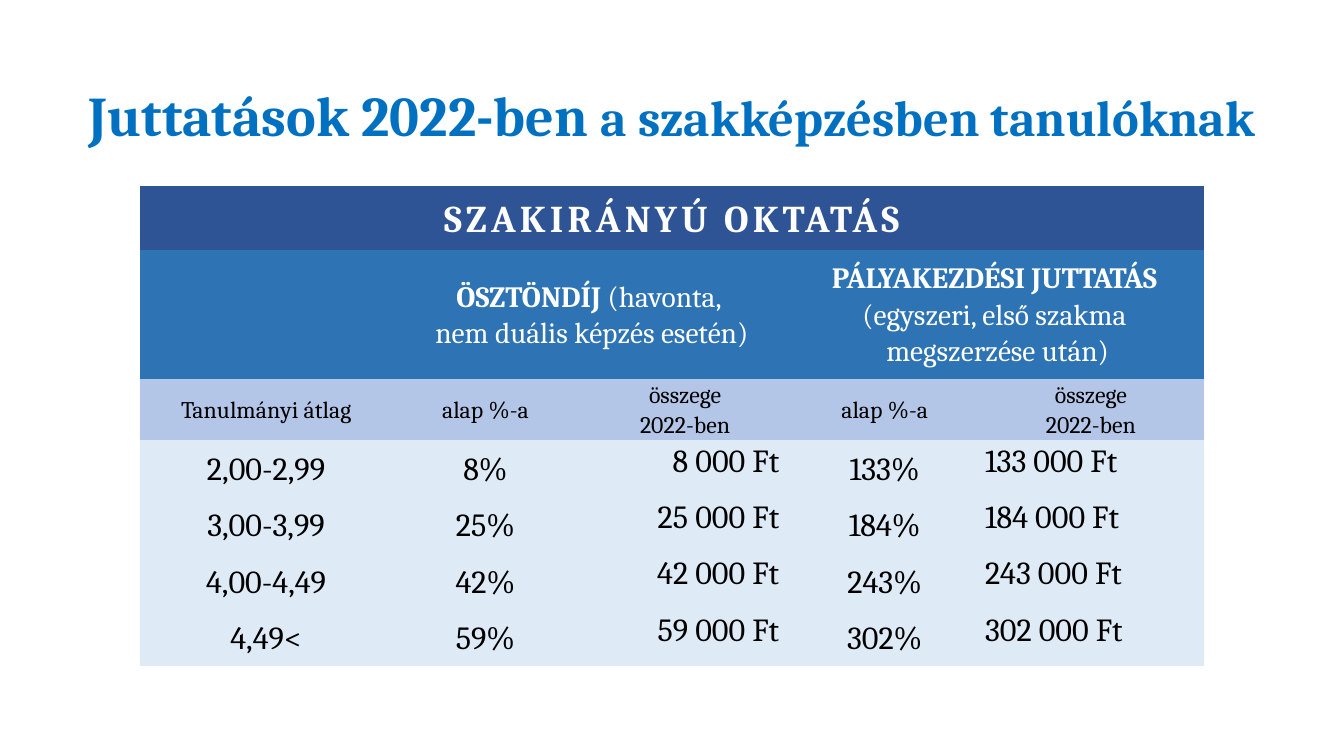
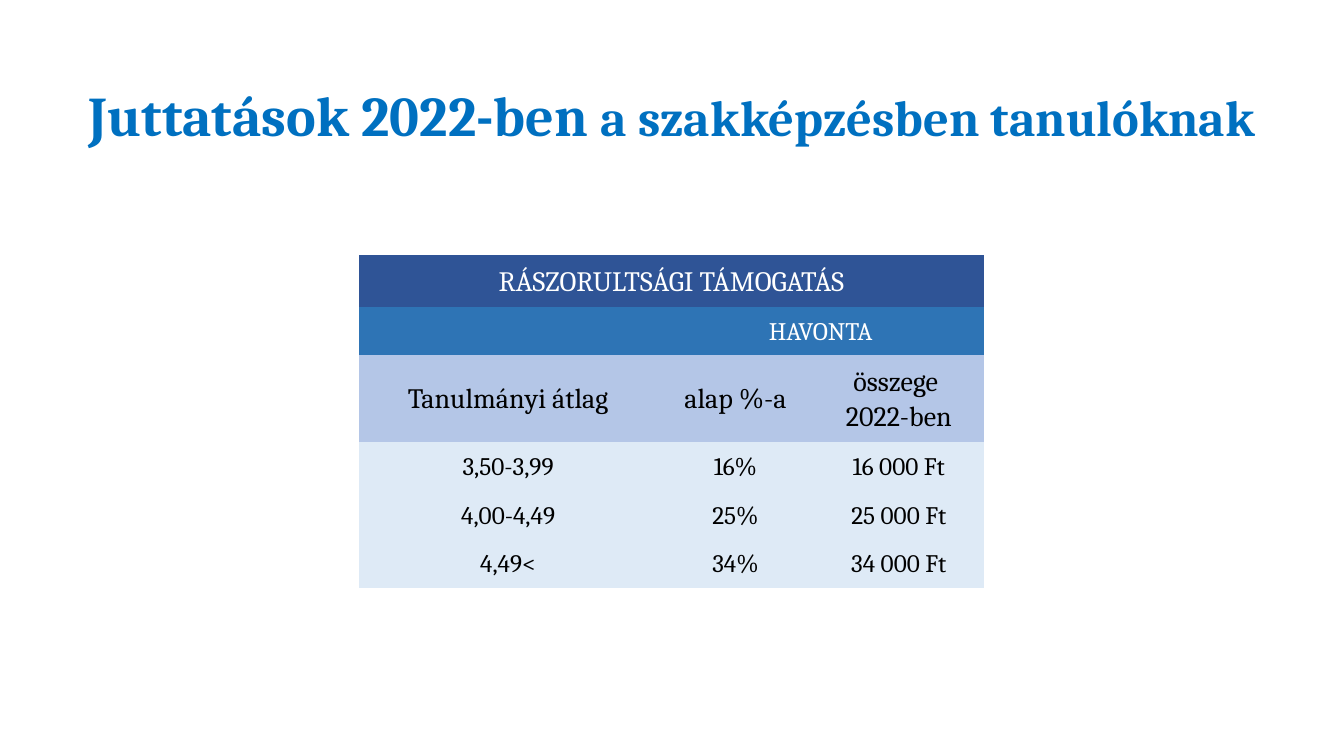
"""Build two slides on student allowances in vocational training in 2022."""
from pptx import Presentation
from pptx.dml.color import RGBColor
from pptx.enum.text import MSO_ANCHOR, MSO_AUTO_SIZE, PP_ALIGN
from pptx.util import Emu, Pt

LEFT, CENTER, RIGHT = PP_ALIGN.LEFT, PP_ALIGN.CENTER, PP_ALIGN.RIGHT
TOP, MIDDLE = MSO_ANCHOR.TOP, MSO_ANCHOR.MIDDLE

PX = 9144
FONT = "Cambria"
PLAIN_TABLE = "{2D5ABB26-0587-4C30-8999-92F81FD0307C}"
COLORS = {
    "heading": "0070C0",
    "white": "FFFFFF",
    "black": "000000",
    "navy": "2F5496",
    "blue": "2E74B5",
    "periwinkle": "B4C6E7",
    "pale": "DEEAF6",
}
BANDS = {
    "title": ("navy", "white"),
    "group": ("blue", "white"),
    "labels": ("periwinkle", "black"),
    "data": ("pale", "black"),
}
HEADING = [("Juttatások 2022-ben ", 40), ("a szakképzésben tanulóknak", 36)]
HEADING_BOX = (45, 58, 1243, 118)
SIDE_INSET, CELL_INSET, AMOUNT_INSET = 7, 8, 12

# None continues the merged cell on its left; a paragraph is a list of (text, bold) runs.
TABLES = [
    {
        "origin": (139, 185),
        "columns": [250, 185, 211, 185, 224],
        "heights": [63, 128, 61, 56, 56, 56, 56],
        "sizes": {"title": 27, "group": 21, "labels": 17, "data": 23},
        "title_spacing": 3,
        "data_anchor": TOP,
        "data_align": [CENTER, CENTER, RIGHT, CENTER, LEFT],
        "tight_columns": {2, 4},
        "rows": [
            ("title", [[[("SZAKIRÁNYÚ OKTATÁS", True)]], None, None, None, None]),
            ("group", [
                "",
                [[("ÖSZTÖNDÍJ", True), (" (havonta, ", False)],
                 [("nem duális képzés esetén)", False)]],
                None,
                [[("PÁLYAKEZDÉSI JUTTATÁS ", True)],
                 [("(egyszeri, első szakma ", False)],
                 [("megszerzése után)", False)]],
                None,
            ]),
            ("labels", ["Tanulmányi átlag", "alap %-a", "összege\n2022-ben",
                        "alap %-a", "összege\n2022-ben"]),
            ("data", ["2,00-2,99", "8%", "8 000 Ft", "133%", "133 000 Ft"]),
            ("data", ["3,00-3,99", "25%", "25 000 Ft", "184%", "184 000 Ft"]),
            ("data", ["4,00-4,49", "42%", "42 000 Ft", "243%", "243 000 Ft"]),
            ("data", ["4,49<", "59%", "59 000 Ft", "302%", "302 000 Ft"]),
        ],
    },
    {
        "origin": (356, 253),
        "columns": [296, 155, 169],
        "heights": [52, 47, 87, 48, 48, 48],
        "sizes": {"title": 20, "group": 18, "labels": 20, "data": 18},
        "title_spacing": 0,
        "data_anchor": MIDDLE,
        "data_align": [CENTER, CENTER, CENTER],
        "tight_columns": {0},
        "rows": [
            ("title", ["RÁSZORULTSÁGI TÁMOGATÁS", None, None]),
            ("group", ["", "HAVONTA", None]),
            ("labels", ["Tanulmányi átlag", "alap %-a", "összege \n2022-ben"]),
            ("data", ["3,50-3,99", "16%", "16 000 Ft"]),
            ("data", ["4,00-4,49", "25%", "25 000 Ft"]),
            ("data", ["4,49<", "34%", "34 000 Ft"]),
        ],
    },
]


def px(length):
    return Emu(length * PX)


def rgb(name):
    return RGBColor.from_string(COLORS[name])


def add_heading(slide):
    heading = slide.shapes.title
    heading.left, heading.top, heading.width, heading.height = map(px, HEADING_BOX)
    frame = heading.text_frame
    frame.word_wrap = True
    frame.auto_size = MSO_AUTO_SIZE.NONE
    frame.vertical_anchor = MIDDLE
    line = frame.paragraphs[0]
    line.alignment = CENTER
    line.line_spacing = 0.9
    line.font.name = FONT
    line.font.bold = True
    line.font.color.rgb = rgb("heading")
    for text, size in HEADING:
        run = line.add_run()
        run.text = text
        run.font.size = Pt(size)


def as_paragraphs(content):
    if isinstance(content, str):
        return [[(line, False)] for line in content.split("\n")]
    return content


def write_cell(cell, content, size, color, align, spacing):
    frame = cell.text_frame
    for index, runs in enumerate(as_paragraphs(content)):
        line = frame.add_paragraph() if index else frame.paragraphs[0]
        line.alignment = align
        line.line_spacing = 1.07
        line.font.name = FONT
        line.font.size = Pt(size)
        line.font.color.rgb = rgb(color)
        for text, bold in runs:
            run = line.add_run()
            run.text = text
            run.font.bold = bold
            if spacing:
                run.font._element.set("spc", str(spacing * 100))


def add_allowances(slide, plan):
    columns, heights, rows = plan["columns"], plan["heights"], plan["rows"]
    box = (*plan["origin"], sum(columns), sum(heights))
    frame = slide.shapes.add_table(len(rows), len(columns), *map(px, box))
    table = frame.table
    table.first_row = table.horz_banding = False
    table._tbl.tblPr[0].text = PLAIN_TABLE
    for column, width in zip(table.columns, columns):
        column.width = px(width)
    for row, height in zip(table.rows, heights):
        row.height = px(height)

    for r, (band, contents) in enumerate(rows):
        fill, color = BANDS[band]
        is_data = band == "data"
        for c, content in enumerate(contents):
            cell = table.cell(r, c)
            cell.fill.solid()
            cell.fill.fore_color.rgb = rgb(fill)
            if not content:
                continue
            last = c
            while last + 1 < len(contents) and contents[last + 1] is None:
                last += 1
            if last > c:
                cell.merge(table.cell(r, last))
            align = plan["data_align"][c] if is_data else CENTER
            tight = band in ("labels", "data") and c in plan["tight_columns"]
            cell.margin_left = px(SIDE_INSET)
            cell.margin_right = px(AMOUNT_INSET if align == RIGHT else SIDE_INSET)
            cell.margin_top = cell.margin_bottom = px(0 if tight else CELL_INSET)
            cell.vertical_anchor = plan["data_anchor"] if is_data else MIDDLE
            spacing = plan["title_spacing"] if band == "title" else 0
            write_cell(cell, content, plan["sizes"][band], color, align, spacing)


def main():
    deck = Presentation()
    deck.slide_width, deck.slide_height = px(1333), px(750)
    for plan in TABLES:
        slide = deck.slides.add_slide(deck.slide_layouts[5])
        add_heading(slide)
        add_allowances(slide, plan)
    deck.save("out.pptx")


if __name__ == "__main__":
    main()
